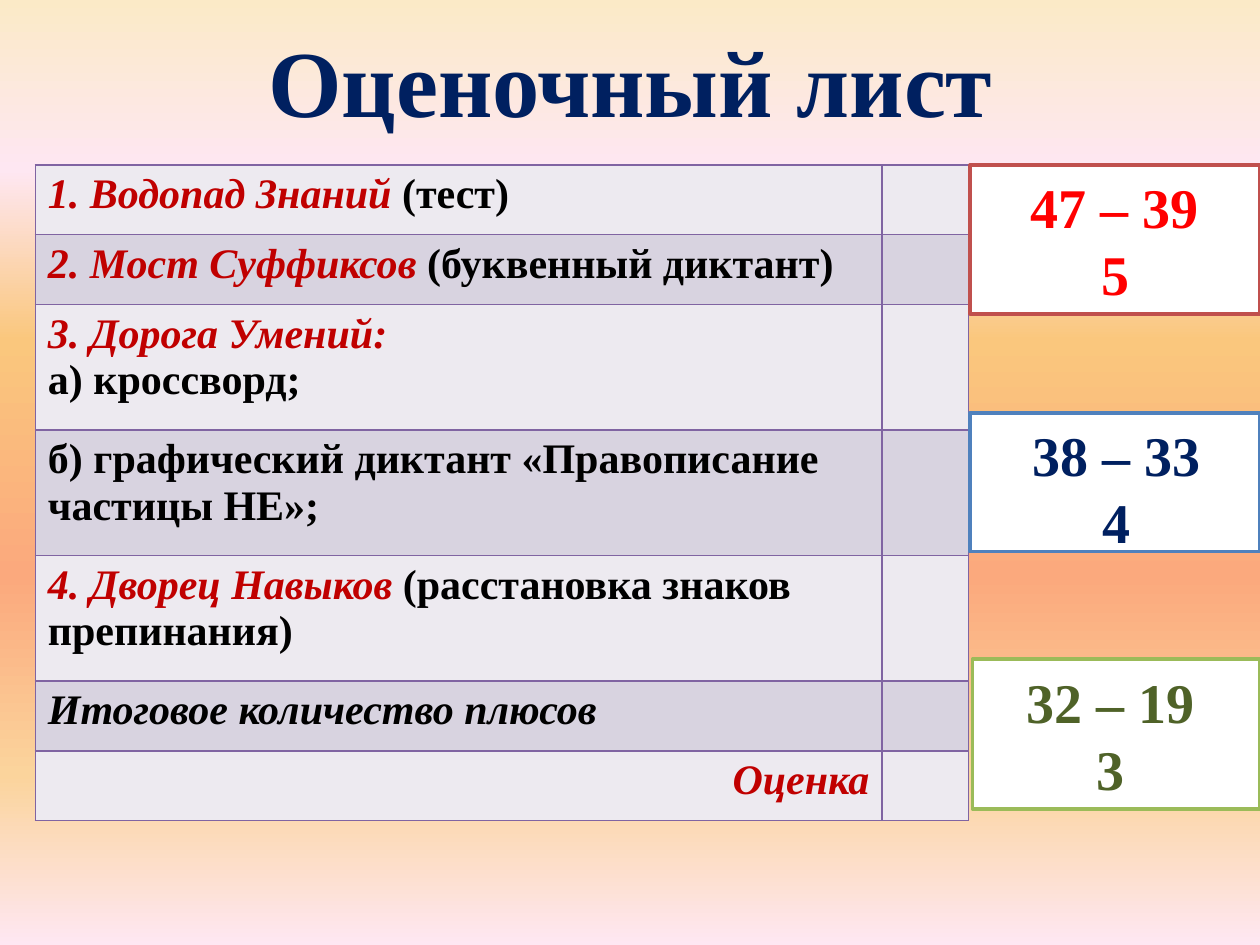
from dataclasses import dataclass

from lxml import etree
from pptx import Presentation
from pptx.dml.color import RGBColor
from pptx.enum.shapes import MSO_SHAPE
from pptx.enum.text import MSO_ANCHOR, MSO_AUTO_SIZE, PP_ALIGN
from pptx.oxml import parse_xml
from pptx.oxml.ns import nsdecls, qn
from pptx.util import Pt

FONT = "Times New Roman"
NAVY, CRIMSON, BLACK, WHITE, PURPLE = "002060", "C00000", "000000", "FFFFFF", "8064A2"
BANDS = ("EDEAF0", "D8D3E0")
BACKGROUND = ((0, "FBEAC7"), (18, "FEE7F2"), (36, "FAC77D"),
              (61, "FBA97D"), (82, "FBD49C"), (100, "FEE7F2"))
TABLE_LEFT, TABLE_TOP = 20.2, 94.3
COLUMNS = (483.8, 49.4)
ONE_LINE, TWO_LINES = 39.8, 71.8


@dataclass
class Box:
    left: float
    top: float
    width: float
    height: float


@dataclass
class Grade:
    points: str
    mark: str
    color: str
    border: str
    frame: Box
    label: Box | None = None


@dataclass
class Stage:
    """A table row: red italic name, then black details."""
    name: str
    details: str = ""
    height: float = ONE_LINE
    color: str = CRIMSON
    align: PP_ALIGN = PP_ALIGN.LEFT


GRADES = (
    Grade("32 – 19", "3", "4F6228", "9BBB59",
          Box(555.8, 376.6, 164.2, 85.7), Box(578.9, 378, 111.6, 85)),
    Grade("38 – 33", "4", NAVY, "4F81BD",
          Box(554.4, 236, 165.6, 79.2), Box(582.5, 236.9, 111.6, 85)),
    Grade("47 – 39", "5", "FF0000", "C0504D", Box(554.4, 94.3, 165.6, 85)),
)
STAGES = (
    Stage("1. Водопад Знаний ", "(тест)"),
    Stage("2. Мост Суффиксов ", "(буквенный диктант)"),
    Stage("3. Дорога Умений:", "\nа) кроссворд;", TWO_LINES),
    Stage("", "б) графический диктант «Правописание частицы НЕ»;", TWO_LINES),
    Stage("4. Дворец Навыков ", "(расстановка знаков препинания)", TWO_LINES),
    Stage("Итоговое количество плюсов", color=BLACK),
    Stage("Оценка", align=PP_ALIGN.RIGHT),
)


def rgb(value: str) -> RGBColor:
    return RGBColor.from_string(value)


def line_xml(tag: str, color: str, width: float):
    return parse_xml(
        f'<a:{tag} {nsdecls("a")} w="{Pt(width)}"><a:solidFill>'
        f'<a:srgbClr val="{color}"/></a:solidFill></a:{tag}>')


def paint_background(slide) -> None:
    fill = slide.background.fill
    fill.gradient()
    fill.gradient_angle = 270
    stops = slide.background._cSld.find(".//" + qn("a:gsLst"))
    for stop in list(stops):
        stops.remove(stop)
    for position, color in BACKGROUND:
        stop = etree.SubElement(stops, qn("a:gs"), pos=str(position * 1000))
        etree.SubElement(stop, qn("a:srgbClr"), val=color)


def place(shape, box: Box) -> None:
    shape.left, shape.top = Pt(box.left), Pt(box.top)
    shape.width, shape.height = Pt(box.width), Pt(box.height)


def style_paragraph(p, size: float, color: str, align: PP_ALIGN) -> None:
    p.alignment = align
    p.font.name, p.font.size, p.font.bold = FONT, Pt(size), True
    p.font.color.rgb = rgb(color)


def write_outlined(tf, lines: tuple[str, ...], size: float, color: str) -> None:
    """Centred bold lines whose letters have an outline of their own colour."""
    for i, line in enumerate(lines):
        p = tf.paragraphs[0] if i == 0 else tf.add_paragraph()
        style_paragraph(p, size, color, PP_ALIGN.CENTER)
        r = p.add_run()
        r.text = line
        r._r.get_or_add_rPr().insert(0, line_xml("ln", color, 0.83))


def add_title(slide) -> None:
    title = slide.shapes.title
    place(title, Box(144, 9.4, 432.7, 72.7))
    tf = title.text_frame
    tf.word_wrap = False
    tf.vertical_anchor = MSO_ANCHOR.TOP
    write_outlined(tf, ("Оценочный лист",), 54, NAVY)


def add_frame(slide, grade: Grade):
    box = grade.frame
    s = slide.shapes.add_shape(MSO_SHAPE.RECTANGLE, Pt(box.left), Pt(box.top),
                               Pt(box.width), Pt(box.height))
    s.shadow.inherit = False
    s.fill.solid()
    s.fill.fore_color.rgb = rgb(WHITE)
    s.line.color.rgb = rgb(grade.border)
    s.line.width = Pt(2)
    return s


def add_grade(slide, grade: Grade) -> None:
    s = add_frame(slide, grade)
    if grade.label:
        box = grade.label
        s = slide.shapes.add_textbox(Pt(box.left), Pt(box.top),
                                     Pt(box.width), Pt(box.height))
        s.text_frame.word_wrap = False
    s.text_frame.auto_size = MSO_AUTO_SIZE.SHAPE_TO_FIT_TEXT
    write_outlined(s.text_frame, (grade.points, grade.mark), 32, grade.color)


def style_cell(cell, fill: str) -> None:
    tc_pr = cell._tc.get_or_add_tcPr()
    for side in ("lnL", "lnR", "lnT", "lnB"):
        tc_pr.append(line_xml(side, PURPLE, 1))
    cell.fill.solid()
    cell.fill.fore_color.rgb = rgb(fill)


def write_stage(tf, stage: Stage) -> None:
    p = tf.paragraphs[0]
    style_paragraph(p, 24, BLACK, stage.align)
    if stage.name:
        r = p.add_run()
        r.text = stage.name
        r.font.italic = True
        r.font.color.rgb = rgb(stage.color)
    if stage.details.startswith("\n"):
        p = tf.add_paragraph()
        style_paragraph(p, 24, BLACK, stage.align)
    if stage.details:
        p.add_run().text = stage.details.lstrip("\n")


def add_score_table(slide) -> None:
    height = sum(stage.height for stage in STAGES)
    table = slide.shapes.add_table(
        len(STAGES), len(COLUMNS), Pt(TABLE_LEFT), Pt(TABLE_TOP),
        Pt(sum(COLUMNS)), Pt(height)).table
    for column, width in zip(table.columns, COLUMNS):
        column.width = Pt(width)
    table.first_row = False
    for i, stage in enumerate(STAGES):
        row = table.rows[i]
        row.height = Pt(stage.height)
        for cell in row.cells:
            style_cell(cell, BANDS[i % 2])
        write_stage(row.cells[0].text_frame, stage)


def main() -> None:
    prs = Presentation()
    prs.slide_width, prs.slide_height = Pt(720), Pt(540)
    slide = prs.slides.add_slide(prs.slide_layouts[5])
    paint_background(slide)
    add_title(slide)
    add_score_table(slide)
    for grade in GRADES:
        add_grade(slide, grade)
    prs.save("out.pptx")


if __name__ == "__main__":
    main()
